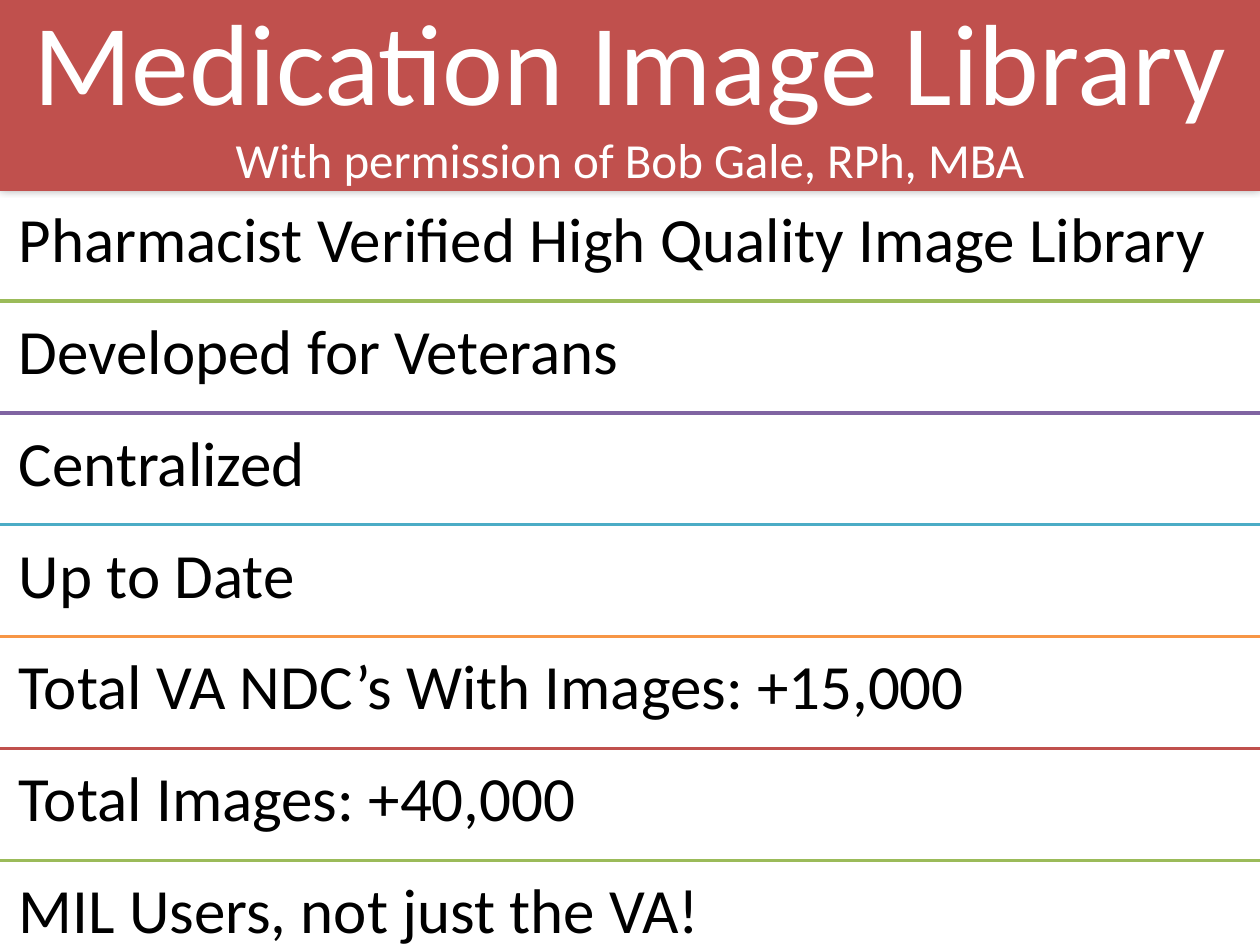
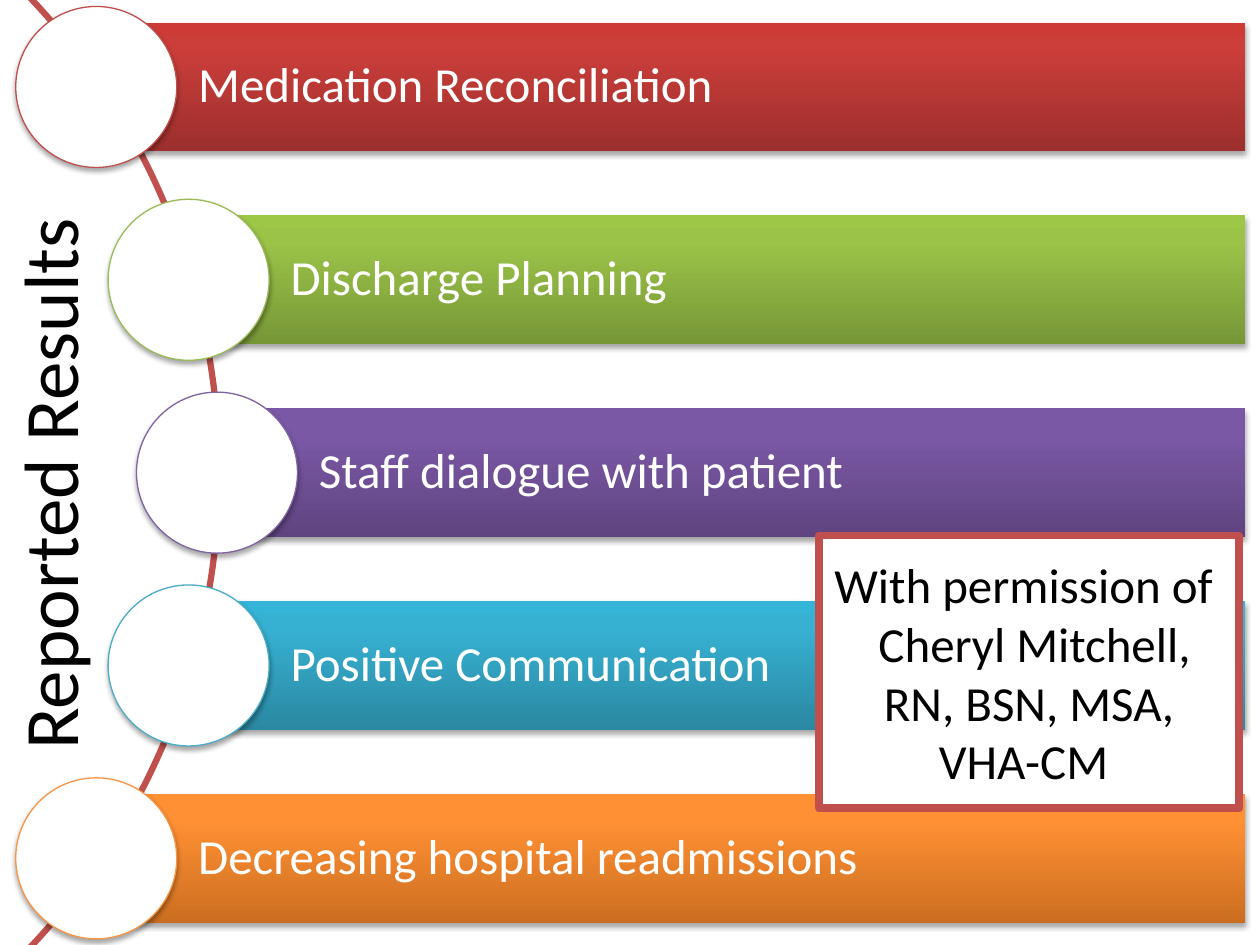
from dataclasses import dataclass

from lxml import etree
from pptx import Presentation
from pptx.dml.color import RGBColor
from pptx.enum.shapes import MSO_CONNECTOR, MSO_SHAPE
from pptx.enum.text import MSO_ANCHOR, PP_ALIGN
from pptx.oxml import parse_xml
from pptx.oxml.ns import nsdecls, qn
from pptx.util import Pt

RECT, OVAL, ARC = MSO_SHAPE.RECTANGLE, MSO_SHAPE.OVAL, MSO_SHAPE.BLOCK_ARC
LEFT, CENTER = PP_ALIGN.LEFT, PP_ALIGN.CENTER
TOP, MIDDLE = MSO_ANCHOR.TOP, MSO_ANCHOR.MIDDLE
STRAIGHT = MSO_CONNECTOR.STRAIGHT

WIDTH, HEIGHT = 720, 540


@dataclass(frozen=True)
class Theme:
    font: str = "Calibri"
    white: str = "FFFFFF"
    black: str = "000000"
    red: str = "C0504D"
    green: str = "9BBB59"
    purple: str = "8064A2"
    teal: str = "4BACC6"
    orange: str = "F79646"
    banner: int = 66
    title: int = 44
    row: int = 36
    body: int = 28
    # opacity %, blur, distance, direction in degrees
    soft_shadow: tuple = (40, 5, 0, 0)
    drop_shadow: tuple = (35, 3.1, 1.8, 90)

    @property
    def accents(self):
        return self.red, self.green, self.purple, self.teal, self.orange


THEME = Theme()


class Deck:
    def __init__(self, theme):
        self.theme = theme
        self.prs = Presentation()
        self.prs.slide_width, self.prs.slide_height = Pt(WIDTH), Pt(HEIGHT)
        self.s = None

    def new_slide(self):
        self.s = self.prs.slides.add_slide(self.prs.slide_layouts[6])

    def shape(self, kind, box, fill=None, line=None, weight=0.75, shadow=None):
        """Fill is a colour, a list of (position, colour) stops, or None."""
        sp = self.s.shapes.add_shape(kind, *map(Pt, box))
        sp.shadow.inherit = False
        if fill is None:
            sp.fill.background()
        elif isinstance(fill, str):
            sp.fill.solid()
            sp.fill.fore_color.rgb = RGBColor.from_string(fill)
        else:
            self.gradient(sp, fill)
        if line:
            sp.line.color.rgb = RGBColor.from_string(line)
            sp.line.width = Pt(weight)
        else:
            sp.line.fill.background()
        if shadow:
            self.shadow(sp, *shadow)
        return sp

    def gradient(self, sp, stops):
        """Runs from the bottom edge up."""
        gs = "".join(f'<a:gs pos="{pos * 1000}"><a:srgbClr val="{color}"/></a:gs>'
                     for pos, color in stops)
        sp.fill.solid()
        pr = sp.element.spPr
        pr.replace(pr.find(qn("a:solidFill")), parse_xml(
            f'<a:gradFill {nsdecls("a")} rotWithShape="1"><a:gsLst>{gs}</a:gsLst>'
            '<a:lin ang="16200000" scaled="0"/></a:gradFill>'))

    def shadow(self, sp, opacity, blur, dist, angle):
        sp.element.spPr.find(qn("a:effectLst")).append(parse_xml(
            f'<a:outerShdw {nsdecls("a")} blurRad="{Pt(blur)}" dist="{Pt(dist)}" '
            f'dir="{angle * 60000}" rotWithShape="0">'
            f'<a:srgbClr val="{self.theme.black}"><a:alpha val="{opacity * 1000}"/>'
            '</a:srgbClr></a:outerShdw>'))

    def rule(self, y, color):
        sp = self.s.shapes.add_connector(STRAIGHT, Pt(0), Pt(y), Pt(WIDTH), Pt(y))
        sp.line.color.rgb = RGBColor.from_string(color)
        sp.line.width = Pt(2)
        etree.SubElement(sp.element.spPr, qn("a:effectLst"))

    def textbox(self, box, *lines, **style):
        sp = self.s.shapes.add_textbox(*map(Pt, box))
        self.set_text(sp, *lines, **style)
        return sp

    def set_text(self, sp, *lines, color=None, align=LEFT, anchor=MIDDLE,
                 insets=(7.2, 3.6, 7.2, 3.6), spacing=1.0):
        """Each line is a (text, size) pair and becomes one paragraph."""
        tf = sp.text_frame
        frame = dict(zip(("margin_left", "margin_top", "margin_right",
                          "margin_bottom"), map(Pt, insets)))
        frame.update(word_wrap=True, vertical_anchor=anchor)
        for name, value in frame.items():
            setattr(tf, name, value)
        for i, (text, size) in enumerate(lines):
            p = tf.paragraphs[0] if i == 0 else tf.add_paragraph()
            p.alignment, p.line_spacing = align, spacing
            r = p.add_run()
            r.text = text
            for name, value in {"name": self.theme.font, "size": Pt(size)}.items():
                setattr(r.font, name, value)
            r.font.color.rgb = RGBColor.from_string(color or self.theme.black)


def image_library(deck):
    t = deck.theme
    banner_bottom, pitch = 108, 63.95
    facts = ("Pharmacist Verified High Quality Image Library",
             "Developed for Veterans",
             "Centralized",
             "Up to Date",
             "Total VA NDC’s With Images: +15,000",
             "Total Images: +40,000",
             "MIL Users, not just the VA!")
    deck.new_slide()
    banner = deck.shape(RECT, (0, -6, WIDTH, banner_bottom + 6), t.red,
                        shadow=t.soft_shadow)
    deck.set_text(banner, ("Medication Image Library", t.banner),
                  ("With permission of Bob Gale, RPh, MBA", t.body),
                  color=t.white, align=CENTER)
    for i, fact in enumerate(facts):
        y = banner_bottom + i * pitch
        deck.rule(y, t.accents[i % len(t.accents)])
        deck.textbox((0, y, WIDTH, pitch), (fact, t.row), anchor=TOP,
                     insets=(10.8,) * 4, spacing=0.9)


def reported_results(deck):
    t = deck.theme
    bar_right, bar_height, dot = 711.4, 73.5, 92
    first_center, pitch = 49.7, 110.2
    # text, left edge of the bar, gradient colours from dark to light
    results = (
        ("Medication Reconciliation", 55, ("9C2F2D", "CB3E3A", "CE3B37")),
        ("Discharge Planning", 107.8, ("779737", "9BC348", "9DC746")),
        ("Staff dialogue with patient", 124, ("5F4480", "7B58A6", "7C57A8")),
        ("Positive Communication", 107.8, ("2A88A2", "37B1D2", "34B4D6")),
        ("Decreasing hospital readmissions", 55, ("CC6E20", "FF9034", "FF9136")),
    )
    deck.new_slide()
    arc = deck.shape(ARC, (-665.3, -125.6, 791.3, 791.3), line=t.red, weight=2)
    for i, value in enumerate((189, 27, 0.002)):
        arc.adjustments[i] = value
    for i, (text, x, colors) in enumerate(results):
        y = first_center + i * pitch
        bar = deck.shape(RECT, (x, y - bar_height / 2, bar_right - x, bar_height),
                         list(zip((0, 80, 100), colors)), shadow=t.drop_shadow)
        deck.set_text(bar, (text, t.body), color=t.white,
                      insets=(58.3, 5.8, 5.8, 5.8), spacing=0.9)
        deck.shape(OVAL, (x - dot / 2, y - dot / 2, dot, dot), t.white,
                   t.accents[i], shadow=t.drop_shadow)
    title = deck.textbox((-332.6, 243.4, WIDTH, 66.2),
                         ("Reported Results", t.title), align=CENTER)
    title.rotation = 270
    credit = deck.shape(RECT, (468, 306, 240, 156), t.white, t.red, weight=4.5)
    deck.set_text(credit, ("With permission of ", t.body),
                  (" Cheryl Mitchell, RN, BSN, MSA, VHA-CM ", t.body), align=CENTER)


def main():
    deck = Deck(THEME)
    image_library(deck)
    reported_results(deck)
    deck.prs.save("out.pptx")


if __name__ == "__main__":
    main()
